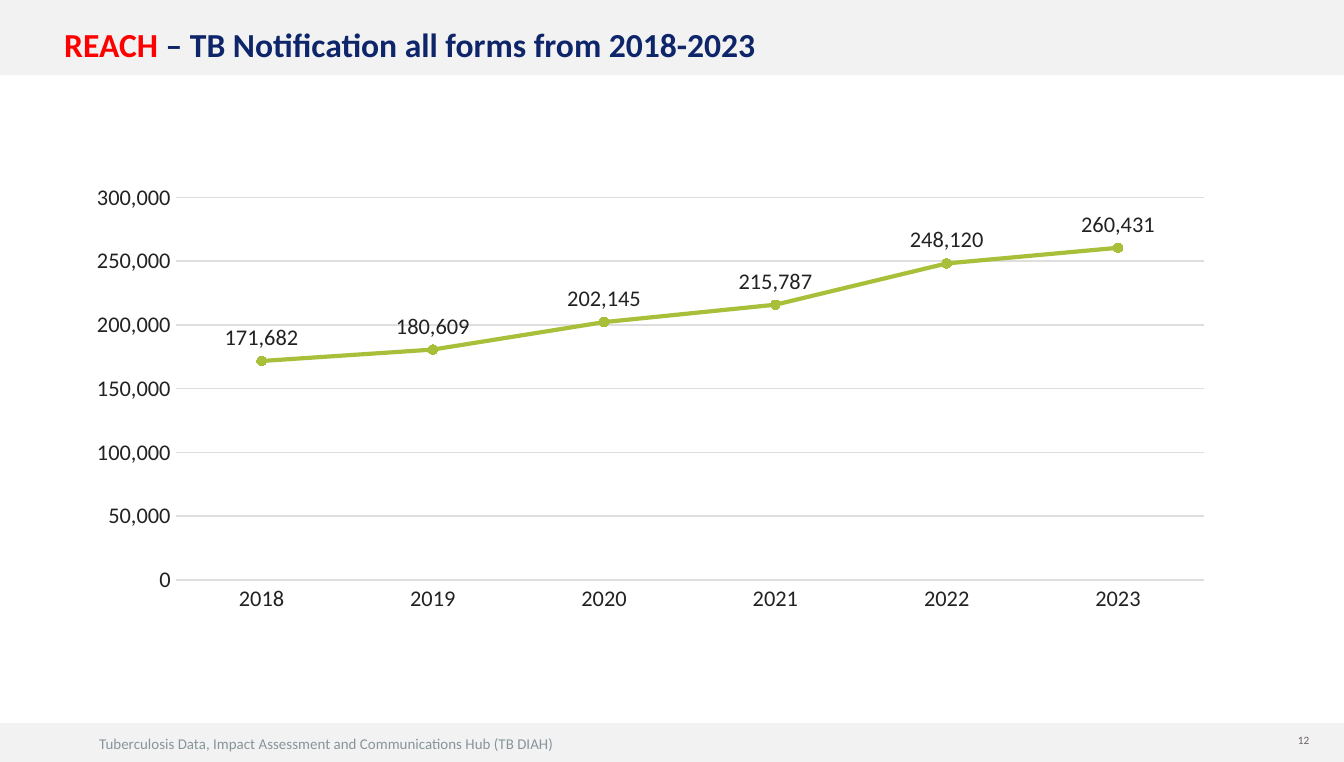
from lxml import etree
from pptx import Presentation, util as u
from pptx.chart.data import CategoryChartData
from pptx.dml.color import RGBColor
from pptx.enum import chart as ch, shapes, text
from pptx.oxml import parse_xml
from pptx.oxml.ns import nsdecls, qn

WIDTH, HEIGHT = 10, 5.67
FONT = "Calibri"
BAND, INK, GRID, GREEN = "F2F2F2", "222222", "DEDEDE", "A7BF39"
NOTIFICATIONS = {
    "2018": 171682, "2019": 180609, "2020": 202145,
    "2021": 215787, "2022": 248120, "2023": 260431,
}


def color(value):
    return RGBColor.from_string(value)


def inside(box, left, top, width, height):
    """Return a box given as inch offsets from the corner of another box."""
    return box[0] + left, box[1] + top, width, height


def emu(box):
    return [u.Inches(value) for value in box]


def style_font(font, size, value, bold=False):
    font.name = FONT
    font.size = u.Pt(size)
    font.bold = bold
    font.color.rgb = color(value)


def add_band(page, box):
    band = page.shapes.add_shape(shapes.MSO_SHAPE.RECTANGLE, *emu(box))
    band.shadow.inherit = False
    band.fill.solid()
    band.fill.fore_color.rgb = color(BAND)
    band.line.fill.background()


def add_text(page, box, runs, size, anchor=text.MSO_ANCHOR.TOP,
             align=text.PP_ALIGN.LEFT, bold=False):
    frame = page.shapes.add_textbox(*emu(box)).text_frame
    frame.word_wrap = True
    frame.vertical_anchor = anchor
    para = frame.paragraphs[0]
    para.alignment = align
    for words, value in runs:
        span = para.add_run()
        span.text = words
        style_font(span.font, size, value, bold)


def add_header(page, box):
    add_band(page, box)
    add_text(page, inside(box, 0.38, 0.13, 8.5, 0.4),
             [("REACH ", "FF0000"),
              ("– TB Notification all forms from 2018-2023", "0E256A")],
             18, anchor=text.MSO_ANCHOR.BOTTOM, bold=True)


def add_footer(page, box):
    add_band(page, box)
    add_text(page, inside(box, 0.64, 0.04, 5, 0.24),
             [("Tuberculosis Data, Impact Assessment and "
               "Communications Hub (TB DIAH)", "879499")], 8)
    add_text(page, inside(box, 9.14, 0.03, 0.7, 0.2), [("12", "6C6463")], 6,
             anchor=text.MSO_ANCHOR.MIDDLE, align=text.PP_ALIGN.RIGHT)


def place_plot(chart, **shares):
    """Fix the inner plot area as shares of the chart's box."""
    area = chart._chartSpace.chart.plotArea
    for old in area.findall(qn("c:layout")):
        area.remove(old)
    layout = parse_xml(f"<c:layout {nsdecls('c')}><c:manualLayout/></c:layout>")
    settings = {"layoutTarget": "inner", "xMode": "edge", "yMode": "edge", **shares}
    for name, value in settings.items():
        etree.SubElement(layout[0], qn(f"c:{name}")).set("val", str(value))
    area.insert(0, layout)


def style_line(line, value, width):
    line.color.rgb = color(value)
    line.width = u.Pt(width)


def style_axes(chart):
    for axis in (chart.category_axis, chart.value_axis):
        axis.major_tick_mark = axis.minor_tick_mark = ch.XL_TICK_MARK.NONE
        style_font(axis.tick_labels.font, 12, INK)
    style_line(chart.category_axis.format.line, GRID, 0.75)
    values = chart.value_axis
    values.format.line.fill.background()
    values.minimum_scale, values.maximum_scale = 0, 300000
    values.major_unit = 50000
    style_line(values.major_gridlines.format.line, GRID, 0.75)
    values.tick_labels.number_format = "#,##0"
    values.tick_labels.number_format_is_linked = False


def style_series(series):
    series.smooth = False
    style_line(series.format.line, GREEN, 2.25)
    marker = series.marker
    marker.style = ch.XL_MARKER_STYLE.CIRCLE
    marker.size = 5
    marker.format.fill.solid()
    marker.format.fill.fore_color.rgb = color(GREEN)
    marker.format.line.color.rgb = color(GREEN)
    labels = series.data_labels
    labels.show_value = True
    labels.position = ch.XL_LABEL_POSITION.ABOVE
    labels.number_format = "#,##0"
    labels.number_format_is_linked = False
    style_font(labels.font, 12, INK)


def add_trend_chart(page, box):
    data = CategoryChartData(number_format="#,##0")
    data.categories = list(NOTIFICATIONS)
    data.add_series("Series 1", list(NOTIFICATIONS.values()))
    chart = page.shapes.add_chart(
        ch.XL_CHART_TYPE.LINE_MARKERS, *emu(box), data).chart
    chart.has_legend = False
    chart.has_title = False
    style_font(chart.font, 10, INK)
    chart.plots[0].vary_by_categories = False
    style_axes(chart)
    style_series(chart.plots[0].series[0])
    place_plot(chart, x=0.1, y=0.153, w=0.88, h=0.705)


def main():
    deck = Presentation()
    deck.slide_width, deck.slide_height = u.Inches(WIDTH), u.Inches(HEIGHT)
    page = deck.slides.add_slide(deck.slide_layouts[6])
    footer_height = 0.29
    add_footer(page, (0, HEIGHT - footer_height, WIDTH, footer_height))
    add_header(page, (0, 0, WIDTH, 0.56))
    add_trend_chart(page, (0.44, 0.15 * HEIGHT, 8.69, 4.04))
    deck.save("out.pptx")


if __name__ == "__main__":
    main()
